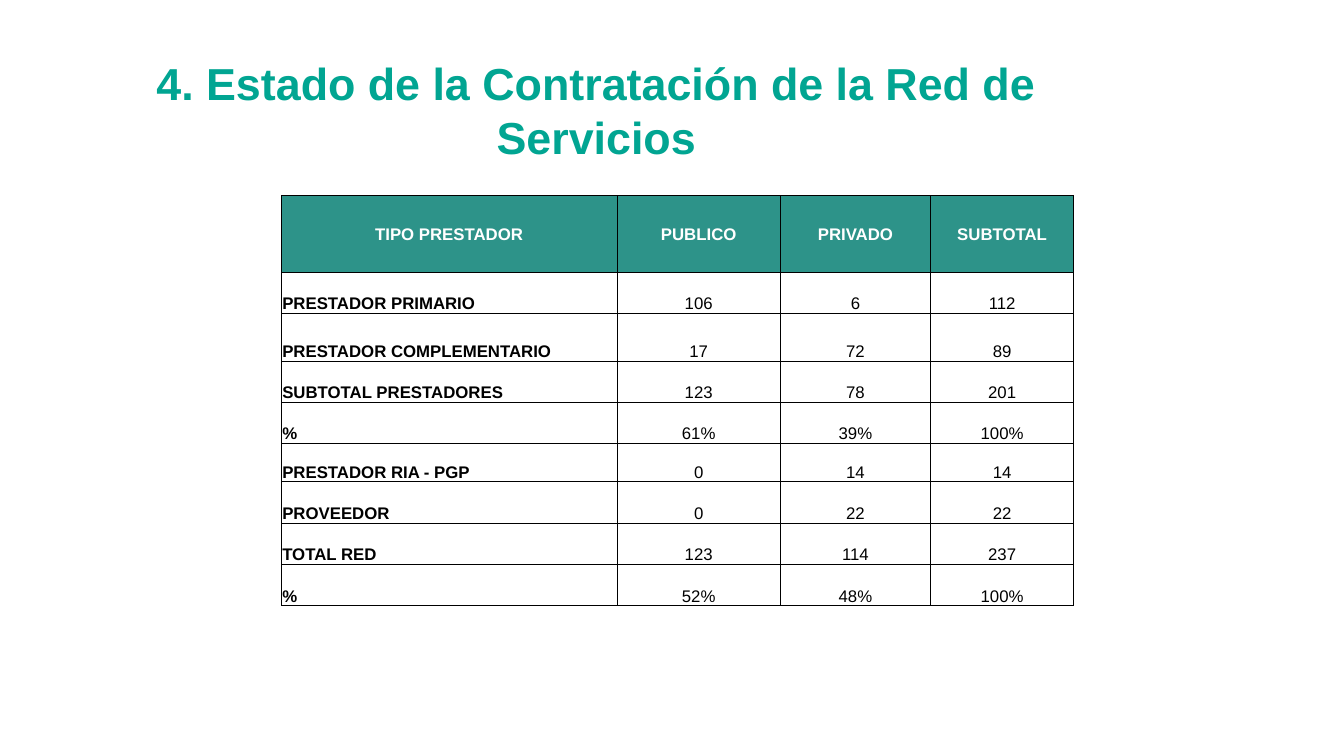
import dataclasses

import lxml.etree
import pptx
import pptx.dml.color
import pptx.enum.text
import pptx.oxml.ns
import pptx.util

Inches = pptx.util.Inches
ALIGN = pptx.enum.text.PP_ALIGN
ANCHOR = pptx.enum.text.MSO_ANCHOR

HEADER = ["TIPO PRESTADOR", "PUBLICO", "PRIVADO", "SUBTOTAL"]
ROWS = [
    ["PRESTADOR PRIMARIO", "106", "6", "112"],
    ["PRESTADOR COMPLEMENTARIO", "17", "72", "89"],
    ["SUBTOTAL PRESTADORES", "123", "78", "201"],
    ["%", "61%", "39%", "100%"],
    ["PRESTADOR RIA - PGP", "0", "14", "14"],
    ["PROVEEDOR", "0", "22", "22"],
    ["TOTAL RED", "123", "114", "237"],
    ["%", "52%", "48%", "100%"],
]
COL_WIDTHS = [3.33, 1.62, 1.49, 1.42]
ROW_HEIGHTS = [0.76, 0.41, 0.47, 0.41, 0.41, 0.38, 0.41, 0.41, 0.41]


@dataclasses.dataclass(frozen=True)
class Theme:
    font: str = "Arial"
    title_size: int = 32
    table_size: int = 12
    border_width: float = 0.5
    title: str = "01A592"
    header: str = "2D9389"
    text: str = "000000"
    white: str = "FFFFFF"


class SlideBuilder:
    def __init__(self, slide, theme):
        self.slide = slide
        self.theme = theme

    def add_run(self, p, text, size, color, bold):
        r = p.add_run()
        r.text = text
        r.font.name = self.theme.font
        r.font.size = pptx.util.Pt(size)
        r.font.bold = bold
        r.font.color.rgb = pptx.dml.color.RGBColor.from_string(color)

    def title(self, text, left, top, width, height):
        sp = self.slide.shapes.title
        sp.left, sp.top = Inches(left), Inches(top)
        sp.width, sp.height = Inches(width), Inches(height)
        tf = sp.text_frame
        tf.word_wrap = True
        tf.auto_size = pptx.enum.text.MSO_AUTO_SIZE.NONE
        tf.vertical_anchor = ANCHOR.TOP
        p = tf.paragraphs[0]
        p.alignment = ALIGN.CENTER
        self.add_run(p, text, self.theme.title_size, self.theme.title, True)

    def borders(self, cell):
        tc_pr = cell._tc.get_or_add_tcPr()
        qn = pptx.oxml.ns.qn
        width = pptx.util.Pt(self.theme.border_width)
        for side in ("a:lnL", "a:lnR", "a:lnT", "a:lnB"):
            ln = lxml.etree.SubElement(tc_pr, qn(side), w=str(int(width)))
            fill = lxml.etree.SubElement(ln, qn("a:solidFill"))
            lxml.etree.SubElement(fill, qn("a:srgbClr"), val=self.theme.text)

    def cell(self, cell, text, is_header, is_label):
        theme = self.theme
        self.borders(cell)
        cell.fill.solid()
        fill = theme.header if is_header else theme.white
        cell.fill.fore_color.rgb = pptx.dml.color.RGBColor.from_string(fill)
        cell.margin_left = cell.margin_right = cell.margin_top = Inches(0.01)
        cell.margin_bottom = 0
        cell.vertical_anchor = ANCHOR.MIDDLE if is_header else ANCHOR.BOTTOM
        p = cell.text_frame.paragraphs[0]
        p.alignment = ALIGN.LEFT if is_label and not is_header else ALIGN.CENTER
        color = theme.white if is_header else theme.text
        self.add_run(p, text, theme.table_size, color, is_header or is_label)

    def table(self, rows, left, top, col_widths, row_heights):
        table = self.slide.shapes.add_table(
            len(rows), len(col_widths), Inches(left), Inches(top),
            Inches(sum(col_widths)), Inches(sum(row_heights))).table
        table.horz_banding = False
        for column, width in zip(table.columns, col_widths):
            column.width = Inches(width)
        for row, height in zip(table.rows, row_heights):
            row.height = Inches(height)
        for i, values in enumerate(rows):
            for j, text in enumerate(values):
                self.cell(table.cell(i, j), text, i == 0, j == 0)


def main():
    prs = pptx.Presentation()
    prs.slide_width, prs.slide_height = Inches(13.33), Inches(7.5)
    s = SlideBuilder(prs.slides.add_slide(prs.slide_layouts[5]), Theme())
    s.title("4. Estado de la Contratación de la Red de Servicios",
            1.02, 0.5, 9.79, 1.18)
    s.table([HEADER] + ROWS, 2.79, 1.94, COL_WIDTHS, ROW_HEIGHTS)
    prs.save("out.pptx")


if __name__ == "__main__":
    main()
